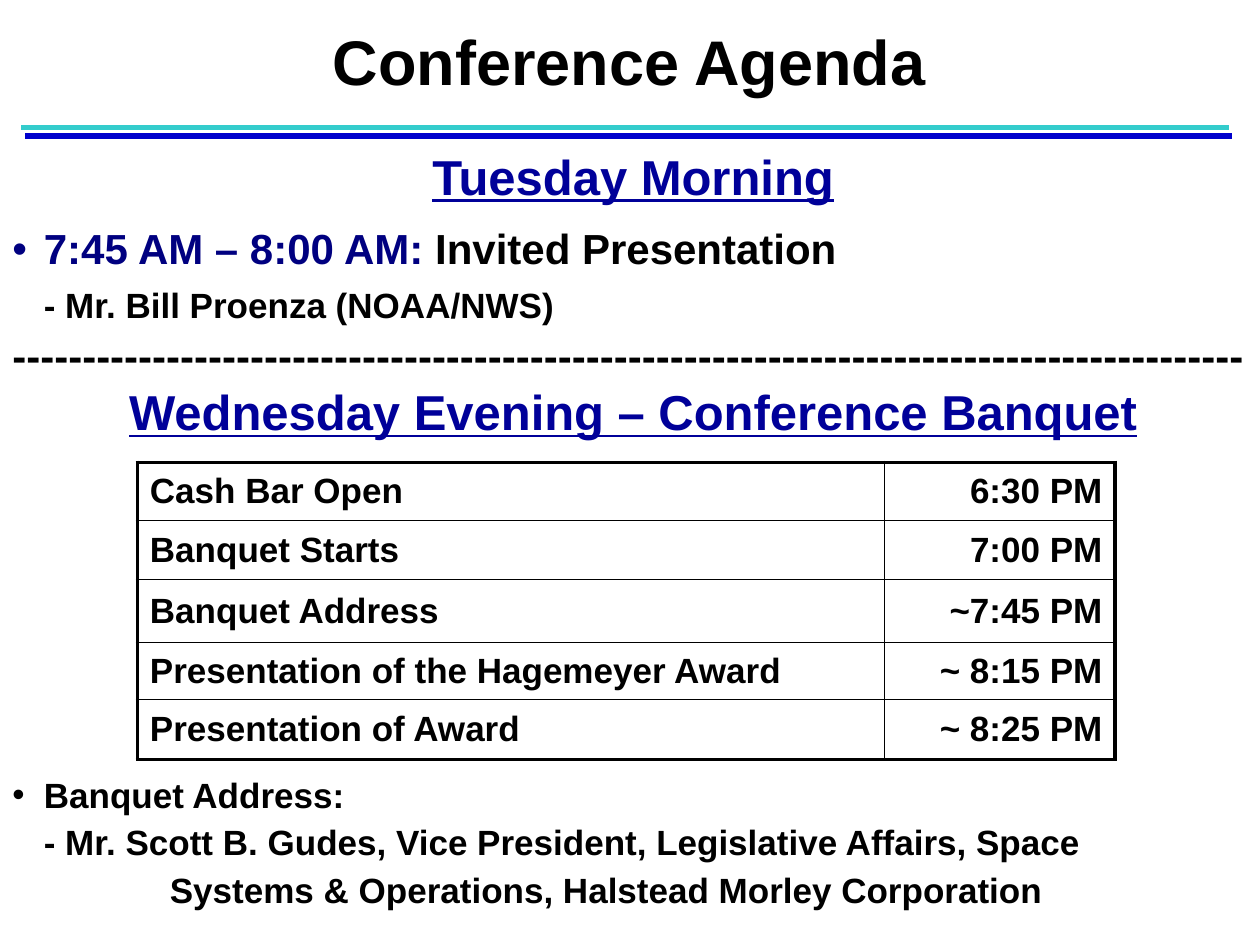
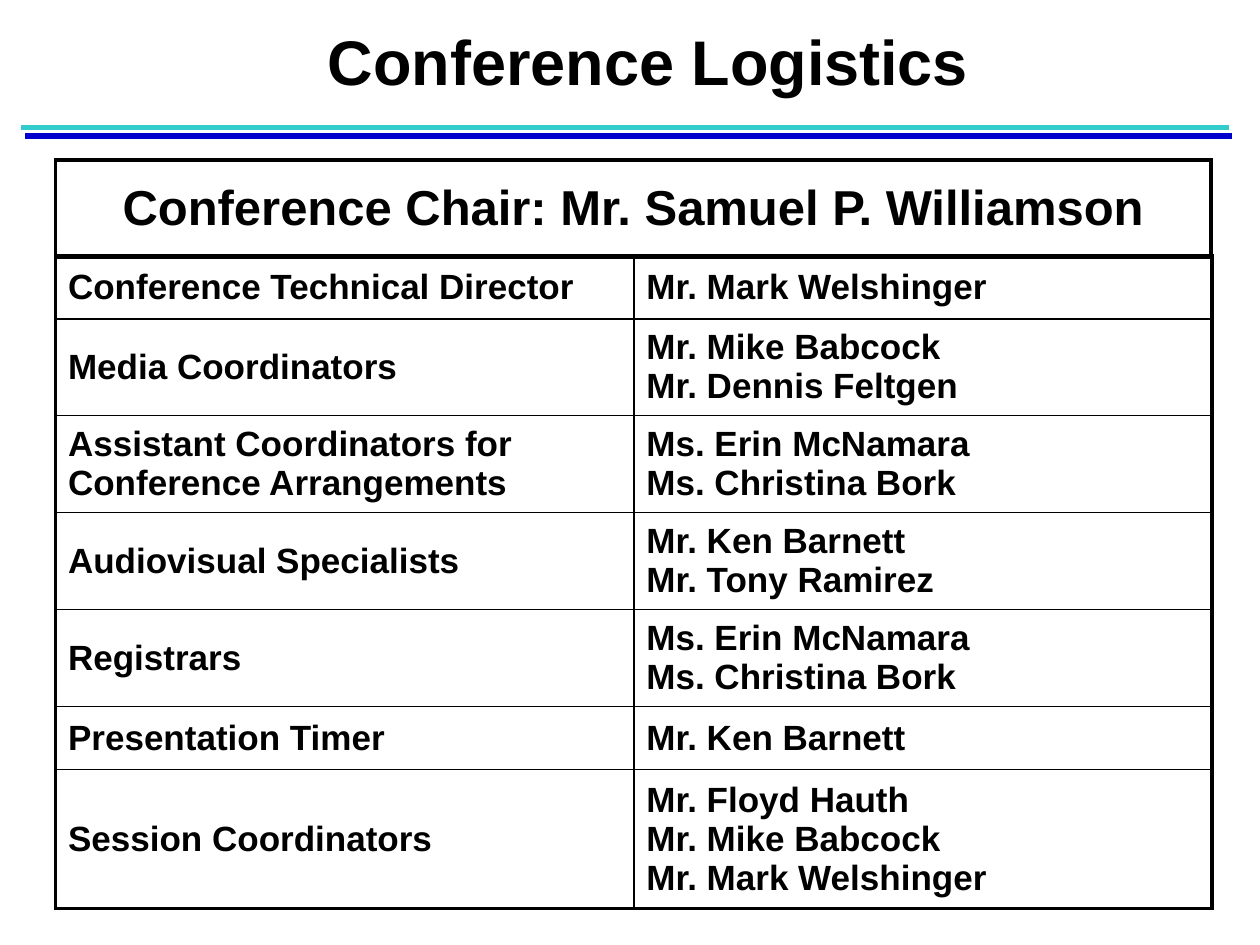
from lxml import etree
from pptx import Presentation
from pptx.dml.color import RGBColor
from pptx.enum.shapes import MSO_CONNECTOR
from pptx.enum.text import MSO_ANCHOR, PP_ALIGN
from pptx.oxml.ns import qn
from pptx.util import Inches, Pt

FONT = "Arial"
BLACK = RGBColor(0x00, 0x00, 0x00)
NAVY = RGBColor(0x00, 0x00, 0x80)
HEADING_BLUE = RGBColor(0x00, 0x00, 0x99)
RULE_TEAL = RGBColor(0x33, 0xCC, 0xCC)
RULE_BLUE = RGBColor(0x00, 0x00, 0xCC)
THICK, THIN = Pt(2.25), Pt(1)


def write(frame, text, size=20, color=BLACK, align=PP_ALIGN.LEFT, underline=False,
          lead="", lead_color=NAVY, bullet=False, margin=0, indent=0,
          before=0, line=1.0):
    """Fill the empty first paragraph of the frame, or add one after it."""
    paragraph = frame.paragraphs[0] if not frame.text else frame.add_paragraph()
    props = paragraph._p.get_or_add_pPr()
    props.set("marL", str(Inches(margin)))
    props.set("indent", str(Inches(indent)))
    if bullet:
        etree.SubElement(props, qn("a:buFont")).set("typeface", FONT)
        etree.SubElement(props, qn("a:buChar")).set("char", "•")
    paragraph.alignment = align
    paragraph.line_spacing = line
    if before:
        paragraph.space_before = Pt(before)
    for words, ink in ((lead, lead_color), (text, color)):
        if words:
            run = paragraph.add_run()
            run.text = words
            run.font.name, run.font.size, run.font.bold = FONT, Pt(size), True
            run.font.underline = underline
            run.font.color.rgb = ink


def add_grid(slide, left, top, widths, heights, rows, **formats):
    """Table with a thick frame and thin inner lines; a cell lists its lines."""
    grid = slide.shapes.add_table(len(rows), len(widths), Inches(left), Inches(top),
                                  Inches(sum(widths)), Inches(sum(heights))).table
    grid.first_row = grid.horz_banding = False
    for column, width in zip(grid.columns, widths):
        column.width = Inches(width)
    last_row, last_column = len(rows) - 1, len(widths) - 1
    for r, row in enumerate(rows):
        grid.rows[r].height = Inches(heights[r])
        for c, lines in enumerate(row):
            cell = grid.cell(r, c)
            cell.vertical_anchor = MSO_ANCHOR.MIDDLE
            for words in lines.split("\n"):
                style = dict(formats)
                if "last_align" in style:
                    last_align = style.pop("last_align")
                    style["align"] = last_align if c == last_column else PP_ALIGN.LEFT
                write(cell.text_frame, words, **style)
            outer = {"L": c == 0, "R": c == last_column, "T": r == 0, "B": r == last_row}
            for side, is_outer in outer.items():
                edge = etree.SubElement(cell._tc.get_or_add_tcPr(), qn(f"a:ln{side}"))
                edge.set("w", str(THICK if is_outer else THIN))
                ink = etree.SubElement(edge, qn("a:solidFill"))
                etree.SubElement(ink, qn("a:srgbClr")).set("val", str(BLACK))
            cell.fill.background()


deck = Presentation()
deck.slide_width, deck.slide_height = Inches(10), Inches(7.5)

# Shared title and double rule
slides = []
for title, title_left in (("Conference Agenda", 0.73), ("Conference Logistics", 0.88)):
    slide = deck.slides.add_slide(deck.slide_layouts[6])
    slides.append(slide)
    for x, y, color in ((0.2, 1.08, RULE_BLUE), (0.17, 1.01, RULE_TEAL)):
        rule = slide.shapes.add_connector(MSO_CONNECTOR.STRAIGHT, Inches(x), Inches(y),
                                          Inches(x + 9.58), Inches(y))
        rule.line.color.rgb = color
        rule.line.width = Pt(3)
        etree.SubElement(rule._element.spPr, qn("a:effectLst"))
    heading = slide.shapes.add_textbox(Inches(title_left), Inches(0.22),
                                       Inches(8.53), Inches(0.61)).text_frame
    heading.word_wrap = True
    write(heading, title, size=36, align=PP_ALIGN.CENTER, line=0.85)
agenda, logistics = slides

# Agenda: day headings
for day, left, top, width in (
        ("Tuesday Morning", 3.31, 1.11, 3.43),
        ("Wednesday Evening – Conference Banquet", 0.91, 2.98, 8.23)):
    day_frame = agenda.shapes.add_textbox(Inches(left), Inches(top),
                                          Inches(width), Inches(0.57)).text_frame
    day_frame.word_wrap = False
    write(day_frame, day, size=28, color=HEADING_BLUE, align=PP_ALIGN.CENTER,
          underline=True)

# Agenda: invited presentation and divider
invited = agenda.shapes.add_textbox(0, Inches(1.75), Inches(10), Inches(1.5)).text_frame
invited.word_wrap = True
write(invited, "Invited Presentation", lead="7:45 AM – 8:00 AM: ", size=24,
      bullet=True, margin=0.25, indent=-0.25, line=0.95)
write(invited, "- Mr. Bill Proenza (NOAA/NWS)", margin=0.25, before=7, line=0.95)
write(invited, "-" * 88, size=24, before=3.8, line=0.95)

# Agenda: banquet timetable
add_grid(agenda, 1.09, 3.67, [5.93, 1.83], [0.46, 0.47, 0.5, 0.45, 0.48], [
    ("Cash Bar Open", "6:30 PM"),
    ("Banquet Starts", "7:00 PM"),
    ("Banquet Address", "~7:45 PM"),
    ("Presentation of the Hagemeyer Award", "~ 8:15 PM"),
    ("Presentation of Award", "~ 8:25 PM"),
], last_align=PP_ALIGN.RIGHT)

# Agenda: banquet speaker
speaker = agenda.shapes.add_textbox(0, Inches(6.09), Inches(10), Inches(1.12)).text_frame
speaker.word_wrap = True
write(speaker, "Banquet Address:", bullet=True, margin=0.25, indent=-0.25)
write(speaker, "- Mr. Scott B. Gudes, Vice President, Legislative Affairs, Space",
      margin=0.25, before=3)
write(speaker, "Systems & Operations, Halstead Morley Corporation", margin=1.25, before=3)

# Logistics: staff, with row heights set by the number of names
staff = [
    ("Conference Technical Director", "Mr. Mark Welshinger"),
    ("Media Coordinators", "Mr. Mike Babcock\nMr. Dennis Feltgen"),
    ("Assistant Coordinators for Conference Arrangements",
     "Ms. Erin McNamara\nMs. Christina Bork"),
    ("Audiovisual Specialists", "Mr. Ken Barnett\nMr. Tony Ramirez"),
    ("Registrars", "Ms. Erin McNamara\nMs. Christina Bork"),
    ("Presentation Timer", "Mr. Ken Barnett"),
    ("Session Coordinators", "Mr. Floyd Hauth\nMr. Mike Babcock\nMr. Mark Welshinger"),
]
height_by_names = {1: 0.5, 2: 0.77, 3: 1.09}
staff_heights = [height_by_names[names.count("\n") + 1] for _, names in staff]
add_grid(logistics, 0.44, 2.03, [4.59, 4.59], staff_heights, staff)

# Logistics: chair
add_grid(logistics, 0.44, 1.27, [9.17], [0.77],
         [("Conference Chair: Mr. Samuel P. Williamson",)],
         size=28, align=PP_ALIGN.CENTER)

deck.save("out.pptx")
